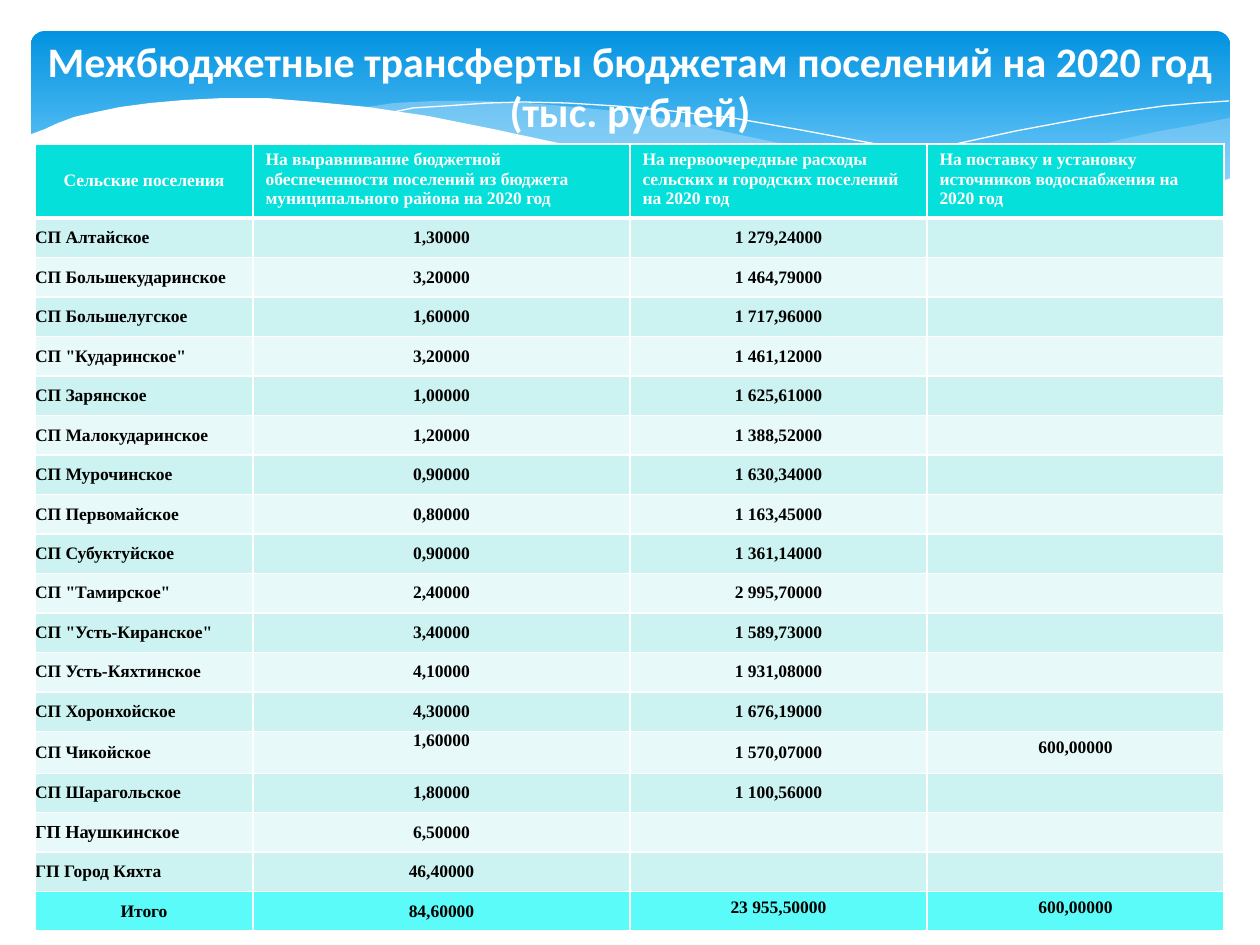
from lxml import etree
from pptx import Presentation
from pptx.dml.color import RGBColor
from pptx.enum.shapes import MSO_SHAPE as SHAPE
from pptx.enum.text import MSO_ANCHOR as ANCHOR, MSO_AUTO_SIZE as AUTOSIZE, PP_ALIGN as ALIGN
from pptx.oxml.ns import qn
from pptx.util import Pt

SCALE = 914400 / 126  # EMU per px

WHITE = RGBColor(0xFF, 0xFF, 0xFF)
BLACK = RGBColor(0x00, 0x00, 0x00)
BLUE = RGBColor(0x02, 0x93, 0xE0)
SKY = RGBColor(0x83, 0xD3, 0xFE)
MIST = RGBColor(0xC6, 0xE7, 0xFC)
TEAL = RGBColor(0x05, 0xE0, 0xDB)
BANDS = (RGBColor(0xCC, 0xF3, 0xF1), RGBColor(0xE7, 0xF9, 0xF8))
AQUA = RGBColor(0x5A, 0xFB, 0xF8)

TITLE = "Межбюджетные трансферты бюджетам поселений на 2020 год (тыс. рублей)"
HEADER = (
    "Сельские поселения",
    "На выравнивание бюджетной обеспеченности поселений из бюджета муниципального района на 2020 год",
    "На первоочередные расходы сельских и городских поселений на 2020 год",
    "На поставку и установку источников водоснабжения на 2020 год",
)
ROWS = (
    ("СП Алтайское", "1,30000", "1 279,24000", ""),
    ("СП Большекударинское", "3,20000", "1 464,79000", ""),
    ("СП Большелугское", "1,60000", "1 717,96000", ""),
    ('СП "Кударинское"', "3,20000", "1 461,12000", ""),
    ("СП Зарянское", "1,00000", "1 625,61000", ""),
    ("СП Малокударинское", "1,20000", "1 388,52000", ""),
    ("СП Мурочинское", "0,90000", "1 630,34000", ""),
    ("СП Первомайское", "0,80000", "1 163,45000", ""),
    ("СП Субуктуйское", "0,90000", "1 361,14000", ""),
    ('СП "Тамирское"', "2,40000", "2 995,70000", ""),
    ('СП "Усть-Киранское"', "3,40000", "1 589,73000", ""),
    ("СП Усть-Кяхтинское", "4,10000", "1 931,08000", ""),
    ("СП Хоронхойское", "4,30000", "1 676,19000", ""),
    ("СП Чикойское", "1,60000", "1 570,07000", "600,00000"),
    ("СП Шарагольское", "1,80000", "1 100,56000", ""),
    ("ГП Наушкинское", "6,50000", "", ""),
    ("ГП Город Кяхта", "46,40000", "", ""),
    ("Итого", "84,60000", "23 955,50000", "600,00000"),
)
CHIKOY, NAUSHKI, TOTAL = 14, 16, len(ROWS)  # table rows with their own format
COLUMNS = (218, 377, 297, 297)
TABLE_H, HEADER_H, CHIKOY_H = 788, 74, 42

RIGHT_WAVE = (
    (1229, 118), (1194, 125), (1160, 131), (1123, 139), (1085, 149), (1014, 165),
    (949, 180), (890, 192), (833, 202), (871, 207), (922, 212), (984, 217),
    (1052, 217), (1110, 210), (1160, 202), (1196, 192), (1230, 178), (1230, 118),
)
MIDDLE_WAVE = (
    (1125, 210), (1055, 200), (976, 188), (890, 169), (793, 146), (736, 134),
    (682, 122), (633, 113), (586, 108), (529, 103), (479, 101), (433, 101),
    (394, 103), (360, 108), (407, 113), (456, 122), (509, 134), (566, 146),
    (668, 170), (757, 189), (838, 203), (910, 212), (974, 217), (1031, 218), (1080, 215),
)
FALLING_LINE = (
    (389, 113), (413, 108), (445, 106), (488, 103), (524, 102), (567, 103), (616, 106),
    (672, 111), (733, 118), (801, 130), (876, 144), (958, 161), (1047, 183), (1143, 209),
)
RISING_LINE = (
    (772, 190), (823, 178), (876, 164), (942, 147), (1016, 131),
    (1091, 117), (1128, 111), (1164, 106), (1198, 103), (1229, 101),
)
WHITE_WAVE = (
    (1231, 178), (1197, 190), (1159, 200), (1118, 209), (1071, 214), (1019, 215),
    (959, 214), (892, 208), (816, 197), (730, 181), (634, 161), (563, 144),
    (493, 129), (428, 116), (368, 107), (315, 102), (266, 98), (223, 98), (184, 100),
    (150, 103), (120, 107), (96, 112), (74, 117), (58, 123), (45, 129), (29, 135),
    (29, 282), (1231, 282),
)


def px(n):
    return round(n * SCALE)


class Deck:
    title_font, table_font = "Calibri", "Times New Roman"
    title_size, table_size = 24, 10

    def __init__(self, width, height):
        self.prs = Presentation()
        self.prs.slide_width, self.prs.slide_height = px(width), px(height)
        self.s = self.prs.slides.add_slide(self.prs.slide_layouts[5])

    def style(self, p, font, size, color, align):
        p.alignment = align
        for r in p.runs:
            r.font.name, r.font.size, r.font.bold = font, Pt(size), True
            r.font.color.rgb = color

    def banner(self, x, y, w, h, top, bottom):
        sp = self.s.shapes.add_shape(SHAPE.ROUNDED_RECTANGLE, px(x), px(y), px(w), px(h))
        sp.adjustments[0] = 0.07
        sp.shadow.inherit = False
        sp.line.fill.background()
        sp.fill.gradient()
        sp.fill.gradient_angle = 270
        for stop, color, pos in zip(sp.fill.gradient_stops, (top, bottom), (0, 0.9)):
            stop.color.rgb, stop.position = color, pos

    def outline(self, points, closed):
        fb = self.s.shapes.build_freeform(*points[0], scale=SCALE)
        fb.add_line_segments(points[1:], close=closed)
        sp = fb.convert_to_shape()
        sp.shadow.inherit = False
        return sp

    def wave(self, points, color, opacity=100):
        sp = self.outline(points, True)
        sp.line.fill.background()
        sp.fill.solid()
        sp.fill.fore_color.rgb = color
        if opacity < 100:
            clr = sp.fill._xPr.find(".//" + qn("a:srgbClr"))
            etree.SubElement(clr, qn("a:alpha")).set("val", str(opacity * 1000))

    def curve(self, points, color):
        sp = self.outline(points, False)
        sp.fill.background()
        sp.line.color.rgb, sp.line.width = color, Pt(0)

    def title(self, text, x, y, w, h):
        sp = self.s.shapes.title
        self.s.shapes._spTree.append(sp._element)  # in front of the banner
        sp.left, sp.top, sp.width, sp.height = px(x), px(y), px(w), px(h)
        tf = sp.text_frame
        tf.text = text
        tf.word_wrap, tf.auto_size, tf.vertical_anchor = True, AUTOSIZE.NONE, ANCHOR.TOP
        self.style(tf.paragraphs[0], self.title_font, self.title_size, WHITE, ALIGN.CENTER)

    def table(self, x, y, widths, heights):
        frame = self.s.shapes.add_table(len(heights), len(widths), px(x), px(y),
                                        px(sum(widths)), px(sum(heights)))
        tbl = frame.table
        tbl.horz_banding = False
        for col, w in zip(tbl.columns, widths):
            col.width = px(w)
        for row, h in zip(tbl.rows, heights):
            row.height = px(h)
        return tbl

    def cell(self, cell, text, fill, color, align, size=None, inset=False, middle=True, rules=(1, 1)):
        size = size or self.table_size
        for side, pt in zip(("lnL", "lnR", "lnT", "lnB"), (1, 1) + rules):
            ln = etree.SubElement(cell._tc.get_or_add_tcPr(), qn("a:" + side), w=str(Pt(pt)))
            solid = etree.SubElement(ln, qn("a:solidFill"))
            etree.SubElement(solid, qn("a:srgbClr"), val=str(WHITE))
        cell.fill.solid()
        cell.fill.fore_color.rgb = fill
        if not inset:
            cell.margin_left = cell.margin_right = cell.margin_top = cell.margin_bottom = 0
        cell.vertical_anchor = ANCHOR.MIDDLE if middle else ANCHOR.TOP
        p = cell.text_frame.paragraphs[0]
        if text:
            p.text = text
            self.style(p, self.table_font, size, color, align)
        else:
            p._p.get_or_add_endParaRPr().set("sz", str(size * 100))


def main():
    deck = Deck(1260, 945)

    # Banner with waves
    deck.banner(31, 31, 1199, 197, BLUE, SKY)
    deck.wave(RIGHT_WAVE, MIST, 29)
    deck.wave(MIDDLE_WAVE, MIST, 40)
    deck.curve(FALLING_LINE, WHITE)
    deck.curve(RISING_LINE, WHITE)
    deck.wave(WHITE_WAVE, WHITE)
    deck.title(TITLE, 0, 29, 1260, 115)

    # Table grid
    row_h = (TABLE_H - HEADER_H - CHIKOY_H) / (len(ROWS) - 1)
    heights = [HEADER_H] + [row_h] * len(ROWS)
    heights[CHIKOY] = CHIKOY_H
    tbl = deck.table(35, 144, COLUMNS, heights)

    # Header row
    for c, text in enumerate(HEADER):
        deck.cell(tbl.cell(0, c), text, TEAL, WHITE, ALIGN.LEFT if c else ALIGN.CENTER,
                  inset=c > 0, middle=c == 0, rules=(1, 3))

    # Settlements and total
    for i, row in enumerate(ROWS, 1):
        fill = AQUA if i == TOTAL else BANDS[(i - 1) % 2]
        for c, text in enumerate(row):
            name = c == 0 and i != TOTAL
            inset = bool(text) and (c == 3 or (i == TOTAL and c == 2))
            deck.cell(tbl.cell(i, c), text, fill, BLACK, ALIGN.LEFT if name else ALIGN.CENTER,
                      size=10.5 if name and i == NAUSHKI else None,
                      inset=inset, middle=not inset and (i, c) != (CHIKOY, 1),
                      rules=(3 if i == 1 else 1, 1))

    deck.prs.save("out.pptx")


if __name__ == "__main__":
    main()
